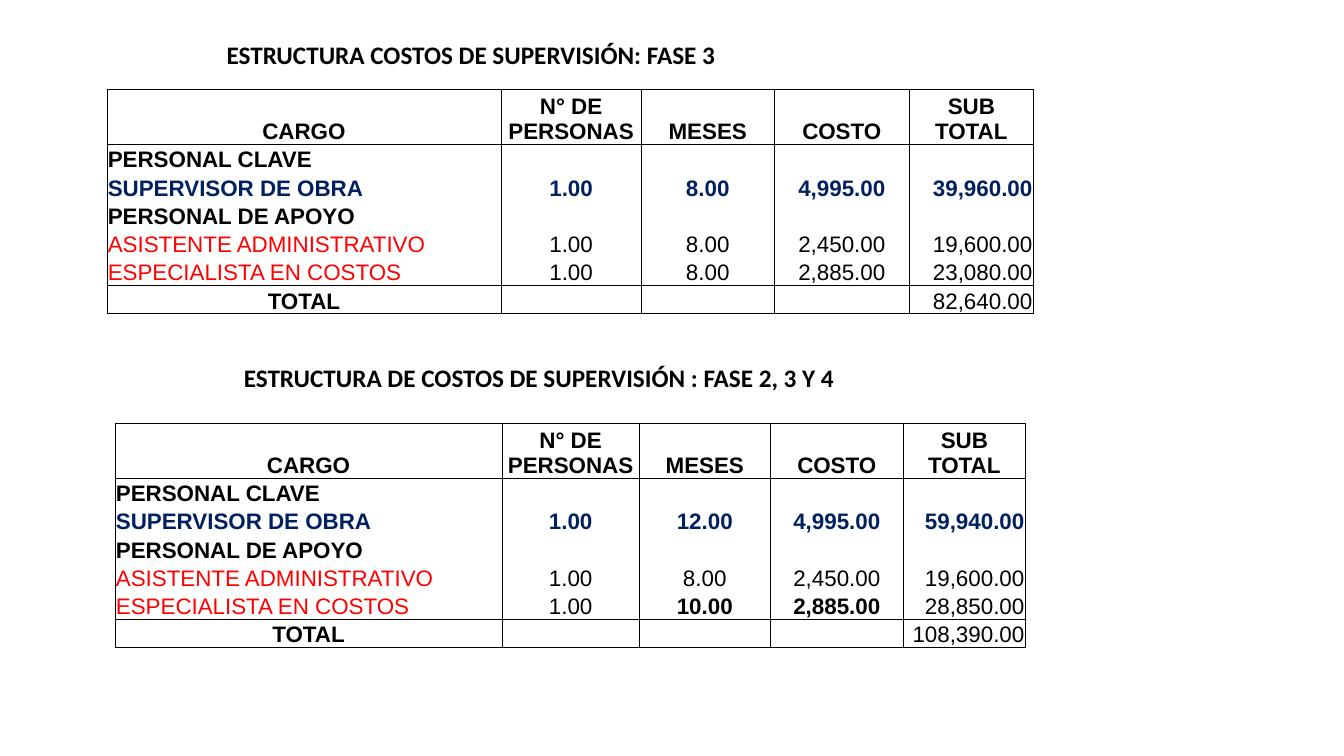
from dataclasses import dataclass

from lxml import etree
from pptx import Presentation
from pptx.dml.color import RGBColor
from pptx.enum import text
from pptx.oxml import ns
from pptx.util import Inches, Pt


@dataclass(frozen=True)
class Theme:
    black: RGBColor = RGBColor(0x00, 0x00, 0x00)
    navy: RGBColor = RGBColor(0x00, 0x20, 0x60)
    red: RGBColor = RGBColor(0xFF, 0x00, 0x00)
    title_font: str = "Calibri"
    table_font: str = "Arial"
    title_size: Pt = Pt(18)
    table_size: Pt = Pt(16)
    border: Pt = Pt(0.5)


THEME = Theme()
LEFT, CENTER, RIGHT = text.PP_ALIGN.LEFT, text.PP_ALIGN.CENTER, text.PP_ALIGN.RIGHT

HEADER = ["CARGO", "N° DE PERSONAS", "MESES", "COSTO", "SUB TOTAL"]
HEADER_HEIGHT, ROW_HEIGHT = 0.53, 0.28
SUPERVISOR_ROW, ASSISTANT_ROWS = 2, (4, 5)


def cost_rows(supervisor, assistant, specialist, total):
    """Complete the table around each post's months, cost and subtotal."""
    return [
        HEADER,
        ["PERSONAL CLAVE", "", "", "", ""],
        ["SUPERVISOR DE OBRA", "1.00", *supervisor],
        ["PERSONAL DE APOYO", "", "", "", ""],
        ["ASISTENTE ADMINISTRATIVO", "1.00", *assistant],
        ["ESPECIALISTA EN COSTOS", "1.00", *specialist],
        ["TOTAL", "", "", "", total],
    ]


def style_font(font, name, size, color, bold):
    font.name, font.size, font.bold = name, size, bold
    font.color.rgb = color


def add_title(slide, left, top, width, title):
    box = slide.shapes.add_textbox(Inches(left), Inches(top), Inches(width), Inches(0.4))
    frame = box.text_frame
    frame.word_wrap = True
    frame.auto_size = text.MSO_AUTO_SIZE.SHAPE_TO_FIT_TEXT
    paragraph = frame.paragraphs[0]
    paragraph.text = title
    style_font(paragraph.font, THEME.title_font, THEME.title_size, THEME.black, True)


def set_borders(cell, top, bottom):
    """Rule both sides of the cell, and its top and bottom where asked."""
    properties = cell._tc.get_or_add_tcPr()
    for side, shown in (("L", True), ("R", True), ("T", top), ("B", bottom)):
        line = etree.SubElement(properties, ns.qn(f"a:ln{side}"), w=str(THEME.border))
        if shown:
            fill = etree.SubElement(line, ns.qn("a:solidFill"))
            etree.SubElement(fill, ns.qn("a:srgbClr"), val=str(THEME.black))
        else:
            etree.SubElement(line, ns.qn("a:noFill"))


def cell_alignment(row, column, last_row):
    if row == 0 or 0 < column < len(HEADER) - 1:
        return CENTER
    if column == 0:
        return CENTER if row == last_row else LEFT
    return RIGHT


def cell_color(row, column):
    if row == SUPERVISOR_ROW:
        return THEME.navy
    return THEME.red if row in ASSISTANT_ROWS and column == 0 else THEME.black


def fill_cell(cell, value, alignment, color, bold):
    cell.margin_left = cell.margin_right = cell.margin_top = Inches(0.01)
    cell.margin_bottom = 0
    cell.vertical_anchor = text.MSO_ANCHOR.BOTTOM
    cell.fill.background()
    paragraph = cell.text_frame.paragraphs[0]
    paragraph.text = value
    paragraph.alignment = alignment
    style_font(paragraph.font, THEME.table_font, THEME.table_size, color, bold)
    if not value:  # keeps an empty cell from stretching its row
        size = str(int(THEME.table_size.pt * 100))
        etree.SubElement(paragraph._p, ns.qn("a:endParaRPr"), sz=size)


def add_cost_table(slide, left, top, widths, rows, bold_cells=()):
    last_row = len(rows) - 1
    height = HEADER_HEIGHT + last_row * ROW_HEIGHT
    table = slide.shapes.add_table(
        len(rows), len(widths), Inches(left), Inches(top), Inches(sum(widths)), Inches(height)
    ).table
    table.first_row = table.horz_banding = False
    for column, width in zip(table.columns, widths):
        column.width = Inches(width)
    for r, values in enumerate(rows):
        table.rows[r].height = Inches(ROW_HEIGHT if r else HEADER_HEIGHT)
        for c, value in enumerate(values):
            cell = table.cell(r, c)
            set_borders(cell, top=r in (0, 1, last_row), bottom=r in (0, last_row - 1, last_row))
            bold = (
                r <= SUPERVISOR_ROW
                or (c == 0 and r not in ASSISTANT_ROWS)
                or (r, c) in bold_cells
            )
            fill_cell(cell, value, cell_alignment(r, c, last_row), cell_color(r, c), bold)


def main():
    presentation = Presentation()
    presentation.slide_width, presentation.slide_height = Inches(13.33), Inches(7.5)
    slide = presentation.slides.add_slide(presentation.slide_layouts[6])

    add_title(slide, 2.15, 0.34, 5.86, "ESTRUCTURA COSTOS DE SUPERVISIÓN: FASE 3")
    add_title(slide, 2.32, 3.55, 6.67, "ESTRUCTURA DE COSTOS DE SUPERVISIÓN : FASE 2, 3 Y 4")

    phase_3 = cost_rows(
        supervisor=["8.00", "4,995.00", "39,960.00"],
        assistant=["8.00", "2,450.00", "19,600.00"],
        specialist=["8.00", "2,885.00", "23,080.00"],
        total="82,640.00",
    )
    add_cost_table(slide, 1.06, 0.89, [3.91, 1.39, 1.32, 1.34, 1.23], phase_3)

    phases_2_to_4 = cost_rows(
        supervisor=["12.00", "4,995.00", "59,940.00"],
        assistant=["8.00", "2,450.00", "19,600.00"],
        specialist=["10.00", "2,885.00", "28,850.00"],
        total="108,390.00",
    )
    add_cost_table(
        slide, 1.14, 4.2, [3.84, 1.36, 1.3, 1.32, 1.21], phases_2_to_4,
        bold_cells={(5, 2), (5, 3)},
    )

    presentation.save("out.pptx")


if __name__ == "__main__":
    main()
